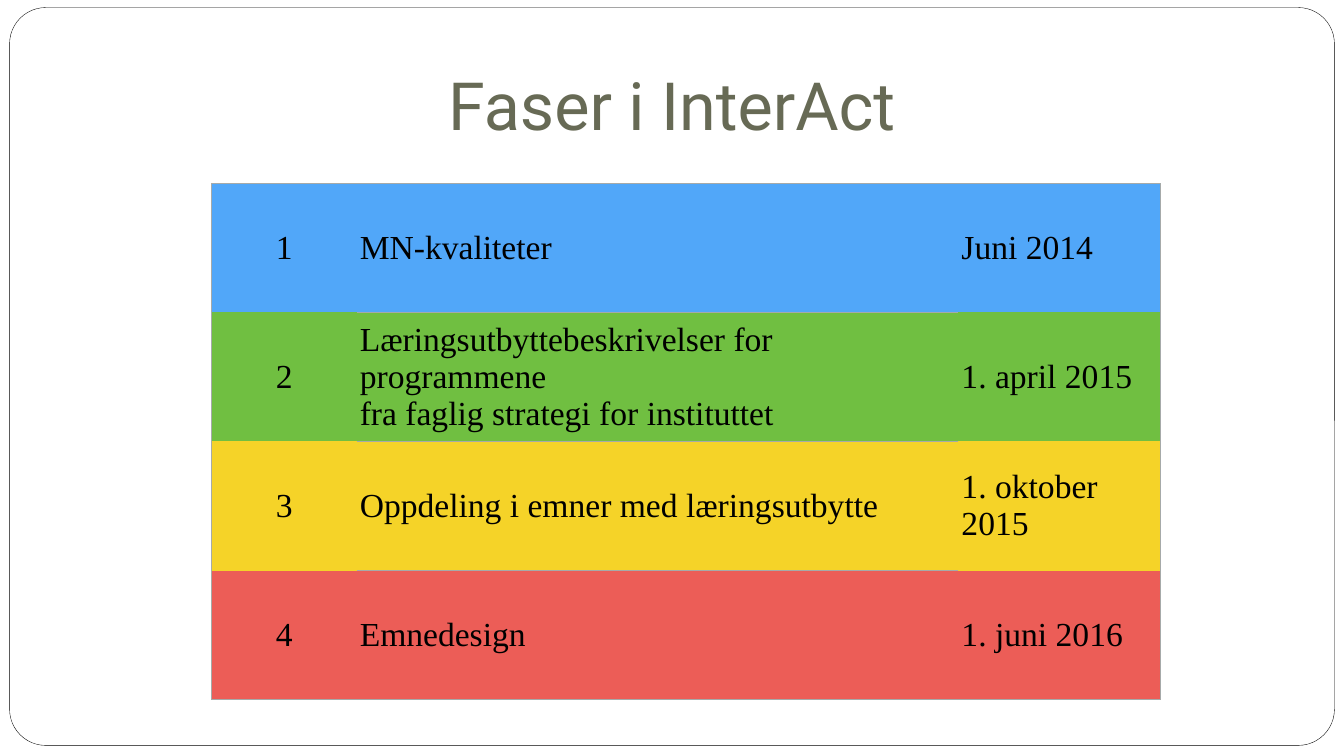
from dataclasses import dataclass

from lxml import etree
from pptx import Presentation
from pptx.dml.color import RGBColor
from pptx.enum import shapes, text
from pptx.oxml import ns
from pptx.util import Inches, Pt

WIDTH, HEIGHT = 26.67, 15
COLUMNS = (2.88, 11.94, 4)
ROW_HEIGHT = 2.56
BORDER = "A6AAA9"


@dataclass
class Phase:
    number: str
    topic: str
    deadline: str
    color: str


PHASES = [
    Phase("1", "MN-kvaliteter", "Juni 2014", "51A7F9"),
    Phase("2", "Læringsutbyttebeskrivelser for programmene\n"
          "fra faglig strategi for instituttet", "1. april 2015", "70BF41"),
    Phase("3", "Oppdeling i emner med læringsutbytte", "1. oktober 2015", "F5D328"),
    Phase("4", "Emnedesign", "1. juni 2016", "EC5D57"),
]


def rgb(value: str) -> RGBColor:
    return RGBColor.from_string(value)


def write(frame, words: str, *, font: str, size: float, color: str, align, spacing=1.0) -> None:
    frame.word_wrap = True
    # A line feed becomes a line break within the paragraph
    frame.paragraphs[0].text = words.replace("\n", "\v")
    for paragraph in frame.paragraphs:
        paragraph.alignment = align
        paragraph.line_spacing = spacing
        for run in paragraph.runs:
            run.font.name, run.font.size = font, Pt(size)
            run.font.color.rgb = rgb(color)


def set_borders(cell, sides: set[str]) -> None:
    """Draw thin lines on the given sides and none on the others."""
    properties = cell._tc.get_or_add_tcPr()
    for position, side in enumerate("LRTB"):
        line = etree.Element(ns.qn(f"a:ln{side}"), w=str(Pt(0.5)))
        if side in sides:
            fill = etree.SubElement(line, ns.qn("a:solidFill"))
            etree.SubElement(fill, ns.qn("a:srgbClr"), val=BORDER)
        else:
            etree.SubElement(line, ns.qn("a:noFill"))
        properties.insert(position, line)


def draw_frame(slide) -> None:
    frame = slide.shapes.add_shape(
        shapes.MSO_SHAPE.ROUNDED_RECTANGLE,
        Inches(0.19), Inches(0.15), Inches(26.29), Inches(14.64))
    frame.adjustments[0] = 0.049
    frame.shadow.inherit = False
    frame.fill.solid()
    frame.fill.fore_color.rgb = rgb("FFFFFF")
    frame.line.color.rgb = rgb("000000")
    frame.line.width = Pt(0.5)
    # Send behind the title
    slide.shapes._spTree.insert(2, frame._element)


def draw_title(slide, words: str) -> None:
    title = slide.shapes.title
    title.left, title.top = 0, Inches(0.04 * HEIGHT)
    title.width, title.height = Inches(WIDTH), Inches(2.5)
    frame = title.text_frame
    frame.vertical_anchor = text.MSO_ANCHOR.BOTTOM
    frame.auto_size = text.MSO_AUTO_SIZE.NONE
    frame.margin_left = frame.margin_right = frame.margin_bottom = Inches(0.24)
    frame.margin_top = Inches(0.12)
    write(frame, words, font="Roboto", size=95, color="676A55",
          align=text.PP_ALIGN.CENTER)


def draw_phases(slide, phases: list[Phase]) -> None:
    table = slide.shapes.add_table(
        len(phases), len(COLUMNS), Inches(4.2), Inches(3.64),
        Inches(sum(COLUMNS)), Inches(ROW_HEIGHT * len(phases))).table
    table.first_row = table.horz_banding = False
    for column, width in zip(table.columns, COLUMNS):
        column.width = Inches(width)

    last_row, last_column = len(phases) - 1, len(COLUMNS) - 1
    for r, phase in enumerate(phases):
        table.rows[r].height = Inches(ROW_HEIGHT)
        for c, words in enumerate((phase.number, phase.topic, phase.deadline)):
            cell = table.cell(r, c)
            cell.fill.solid()
            cell.fill.fore_color.rgb = rgb(phase.color)
            cell.vertical_anchor = text.MSO_ANCHOR.MIDDLE
            cell.margin_left = cell.margin_right = Inches(0.06)
            cell.margin_top = cell.margin_bottom = Inches(0.06)
            write(cell.text_frame, words, font="Times New Roman", size=48, color="000000",
                  align=text.PP_ALIGN.LEFT if c else text.PP_ALIGN.CENTER)
            # Outline all round, inner lines in the topic column only
            edges = {"L": c == 0, "R": c == last_column,
                     "T": r == 0 or c == 1, "B": r == last_row or c == 1}
            set_borders(cell, {side for side, drawn in edges.items() if drawn})


def main() -> None:
    deck = Presentation()
    deck.slide_width, deck.slide_height = Inches(WIDTH), Inches(HEIGHT)
    slide = deck.slides.add_slide(deck.slide_layouts.get_by_name("Title Only"))
    draw_frame(slide)
    draw_title(slide, "Faser i InterAct")
    draw_phases(slide, PHASES)
    deck.save("out.pptx")


if __name__ == "__main__":
    main()
